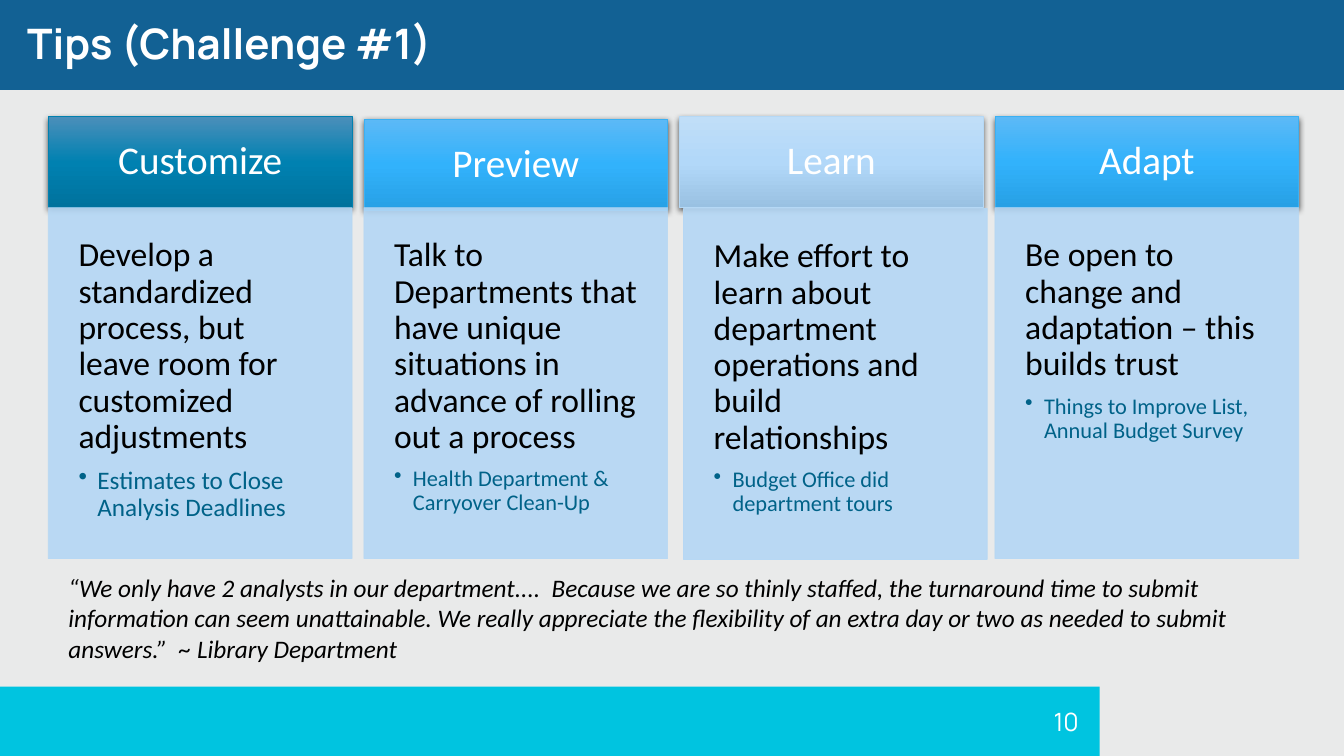
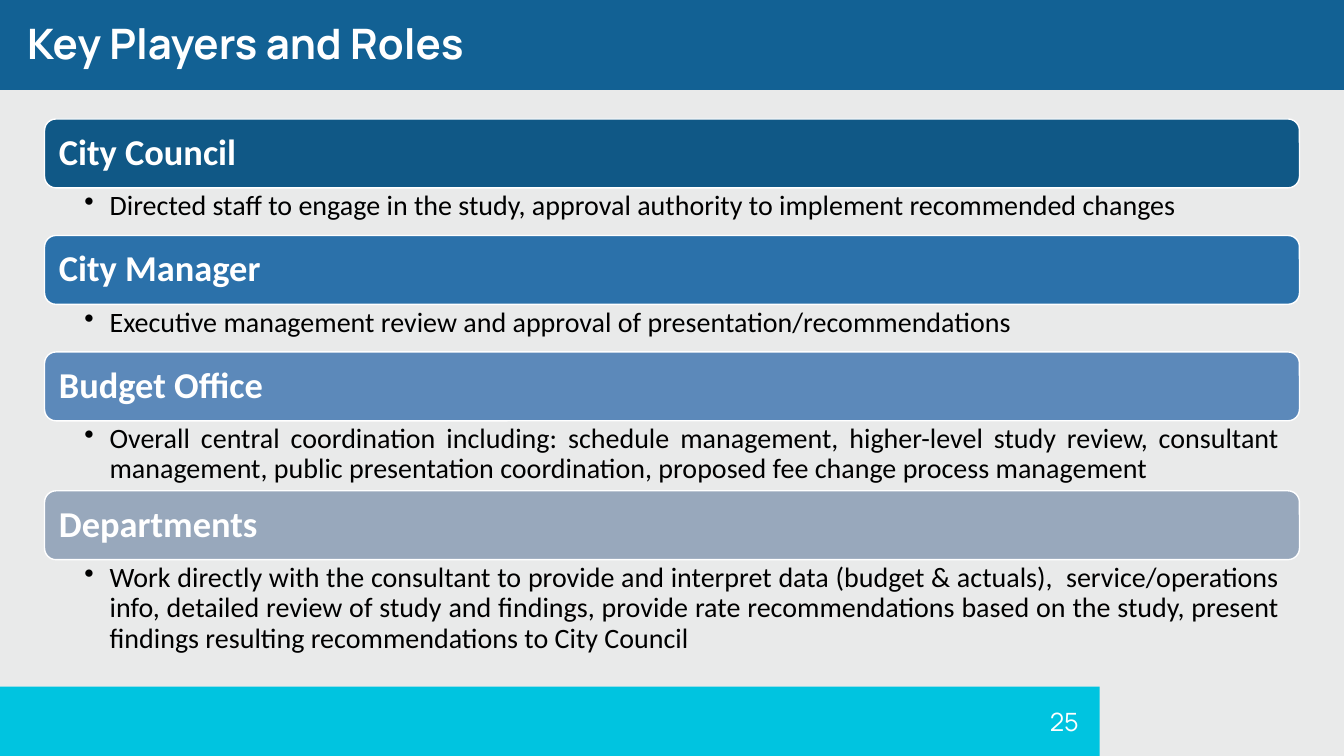
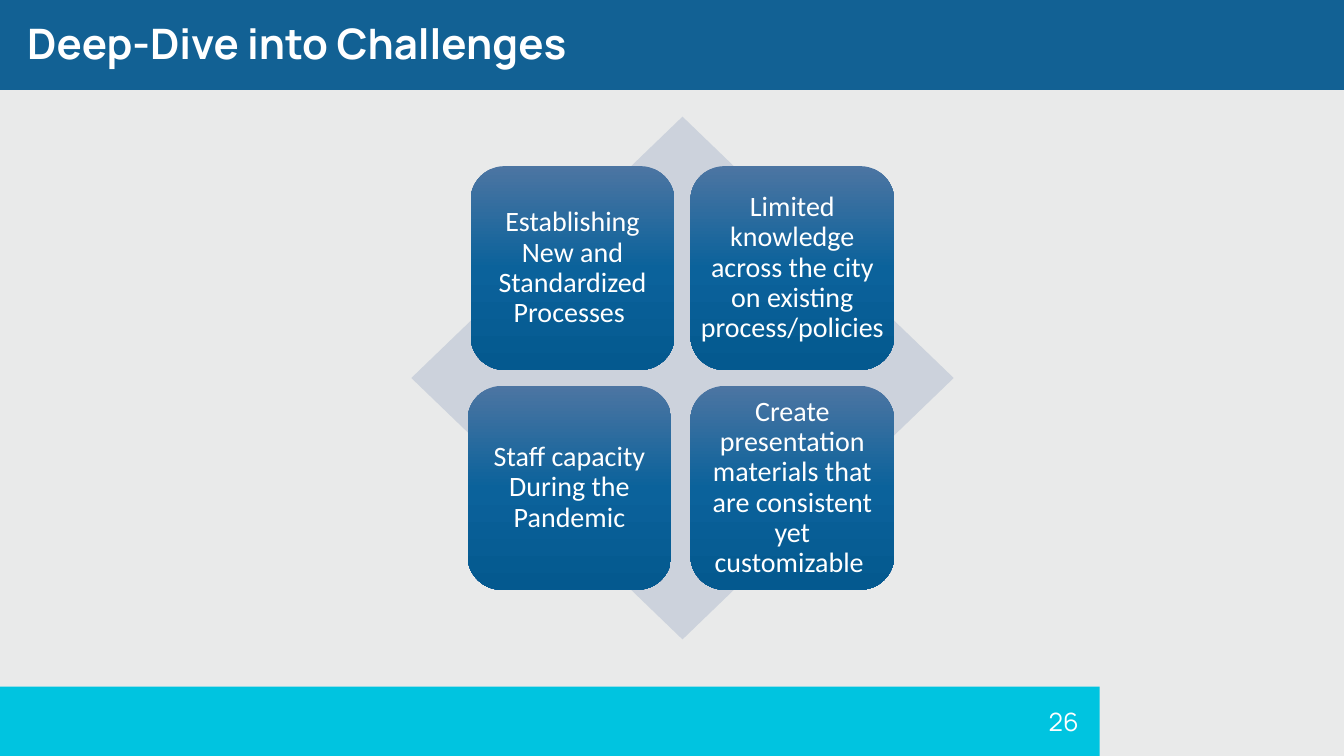
import dataclasses

import lxml.etree
import pptx
import pptx.dml.color
import pptx.enum.shapes
import pptx.enum.text
import pptx.oxml.ns
import pptx.util

Pt = pptx.util.Pt
qn = pptx.oxml.ns.qn
SHAPES = pptx.enum.shapes.MSO_SHAPE
ALIGN = pptx.enum.text.PP_ALIGN
ANCHOR = pptx.enum.text.MSO_ANCHOR


@dataclasses.dataclass(frozen=True)
class Theme:
    heading_font: str = "Manrope"
    body_font: str = "Calibri"
    page: str = "E9EAEA"
    title_band: str = "126194"
    footer_band: str = "00C4E0"
    white: str = "FFFFFF"
    ink: str = "000000"
    card: str = "B4D7F5"
    note: str = "006288"
    diamond: str = "CCD2DC"
    deep: tuple = ("4B8FBA", "0081B1", "00729D")
    bright: tuple = ("5CB9F6", "32B2FB", "27A0E5")
    pale: tuple = ("C0DEF8", "B2D8F9", "99C1E2")
    tile: tuple = ("4C75A2", "0B629B", "04598F")
    title_size: int = 30
    header_size: int = 28
    bar_size: int = 26
    card_size: int = 24
    text_size: int = 20
    small_size: int = 18
    note_size: int = 16


THEME = Theme()
SLIDE_WIDTH, SLIDE_HEIGHT = 960, 540

TIPS = [
    dict(header="Customize", colors=THEME.deep, line="0180AF",
         text="Develop a standardized process, but leave room for customized adjustments",
         note="Estimates to Close Analysis Deadlines", note_size=THEME.small_size),
    dict(header="Preview", colors=THEME.bright, line="3BB0F2", header_drop=1.8,
         text="Talk to Departments that have unique situations in advance of rolling out a process",
         note="Health Department & Carryover Clean-Up"),
    dict(header="Learn", colors=THEME.pale, line="B5D8F5", card_shift=(2.9, 0.7),
         text="Make effort to learn about department operations and build relationships",
         note="Budget Office did department tours"),
    dict(header="Adapt", colors=THEME.bright, line="3BB0F2",
         text="Be open to change and adaptation – this builds trust",
         note="Things to Improve List, Annual Budget Survey"),
]
QUOTE = (
    "“We only have 2 analysts in our department....  Because we are so thinly staffed, "
    "the turnaround time to submit information can seem unattainable. We really appreciate "
    "the flexibility of an extra day or two as needed to submit answers.”  ~ Library Department"
)
ROLES = [
    ("City Council", "105886", 34, ALIGN.LEFT,
     "Directed staff to engage in the study, approval authority to implement recommended changes"),
    ("City Manager", "2B71AA", 34, ALIGN.LEFT,
     "Executive management review and approval of presentation/recommendations"),
    ("Budget Office", "5C89BA", 50, ALIGN.JUSTIFY,
     "Overall central coordination including: schedule management, higher-level study review, "
     "consultant management, public presentation coordination, proposed fee change process "
     "management"),
    ("Departments", "98A8BC", 72, ALIGN.JUSTIFY,
     "Work directly with the consultant to provide and interpret data (budget & actuals),  "
     "service/operations info, detailed review of study and findings, provide rate "
     "recommendations based on the study, present findings resulting recommendations to "
     "City Council"),
]
CHALLENGES = [
    ("Establishing New and Standardized Processes ", 5.8, 0),
    ("Limited knowledge across the city on existing process/policies", 0, 0),
    ("Staff capacity During the Pandemic", 5.8, -2.2),
    ("Create presentation materials that are consistent yet customizable ", 5.8, 0),
]


def rgb(color):
    return pptx.dml.color.RGBColor.from_string(color)


def add_color(parent, color, opacity=100):
    element = lxml.etree.SubElement(parent, qn("a:srgbClr"), val=color)
    if opacity < 100:
        lxml.etree.SubElement(element, qn("a:alpha"), val=str(opacity * 1000))


def add_block(slide, preset, box, fill, line=None, line_width=0.5, opacity=100):
    shape = slide.shapes.add_shape(preset, *map(Pt, box))
    shape.shadow.inherit = False
    if isinstance(fill, tuple):
        shape.fill.gradient()
        shape.fill.gradient_angle = 270
        stops = shape._element.spPr.find(".//" + qn("a:gsLst"))
        stops.clear()
        for index, color in enumerate(fill):
            stop = lxml.etree.SubElement(stops, qn("a:gs"), pos=str(index * 50000))
            add_color(stop, color)
    else:
        shape.fill.solid()
        shape.fill.fore_color.rgb = rgb(fill)
    if line:
        shape.line.color.rgb = rgb(line)
        shape.line.width = Pt(line_width)
    else:
        shape.line.fill.background()
    if opacity < 100:
        for color in shape._element.spPr.iter(qn("a:srgbClr")):
            lxml.etree.SubElement(color, qn("a:alpha"), val=str(opacity * 1000))
    return shape


def add_shadow(shape):
    effects = shape._element.spPr.find(qn("a:effectLst"))
    shadow = lxml.etree.SubElement(
        effects, qn("a:outerShdw"), blurRad=str(Pt(4.5)), dist=str(Pt(1.5)),
        dir="5400000", rotWithShape="0")
    add_color(shadow, THEME.ink, 63)


def add_text_box(slide, box):
    return slide.shapes.add_textbox(*map(Pt, box))


def set_frame(shape, insets=(7.2, 3.6, 7.2, 3.6), anchor=ANCHOR.TOP):
    frame = shape.text_frame
    frame.word_wrap = True
    frame.vertical_anchor = anchor
    frame.margin_left, frame.margin_top, frame.margin_right, frame.margin_bottom = map(Pt, insets)
    return frame


def write(paragraph, text, size, color, font=THEME.body_font, align=ALIGN.LEFT,
          spacing=0.9, after=0, bullet_indent=0, bold=False, italic=False):
    paragraph.alignment = align
    paragraph.line_spacing = spacing
    paragraph.space_after = Pt(after)
    if bullet_indent:
        properties = paragraph._p.get_or_add_pPr()
        properties.set("marL", str(Pt(bullet_indent)))
        properties.set("indent", str(-Pt(bullet_indent)))
        lxml.etree.SubElement(properties, qn("a:buChar"), char="•")
    run = paragraph.add_run()
    run.text = text
    run.font.name = font
    run.font.size = Pt(size)
    run.font.color.rgb = rgb(color)
    run.font.bold = bold
    run.font.italic = italic


def add_slide(presentation, title, number):
    slide = presentation.slides.add_slide(presentation.slide_layouts[6])
    slide.background.fill.solid()
    slide.background.fill.fore_color.rgb = rgb(THEME.page)
    add_block(slide, SHAPES.RECTANGLE, (0, 490.4, 785.6, 49.6), THEME.footer_band)
    add_block(slide, SHAPES.RECTANGLE, (0, 0, SLIDE_WIDTH, 64.2), THEME.title_band)
    title_frame = set_frame(add_text_box(slide, (12.4, 15, 936, 35.5)), anchor=ANCHOR.MIDDLE)
    write(title_frame.paragraphs[0], title, THEME.title_size, THEME.white,
          THEME.heading_font, bold=True)
    number_frame = set_frame(add_text_box(slide, (13, 501, 764.6, 29)), anchor=ANCHOR.MIDDLE)
    write(number_frame.paragraphs[0], str(number), THEME.small_size, THEME.white,
          THEME.heading_font, ALIGN.RIGHT, spacing=1.0)
    return slide


def build_tips(presentation):
    slide = add_slide(presentation, "Tips (Challenge #1)", 10)
    left, pitch, width = 34.5, 225.4, 217
    header_top, header_height, card_top, card_height = 83.3, 65, 148.3, 250.6
    for index, tip in enumerate(TIPS):
        x = left + index * pitch
        header_box = (x, header_top + tip.get("header_drop", 0), width, header_height)
        header = add_block(slide, SHAPES.RECTANGLE, header_box, tip["colors"], tip["line"])
        add_shadow(header)
        frame = set_frame(header, (17, 17, 17, 17), ANCHOR.MIDDLE)
        write(frame.paragraphs[0], tip["header"], THEME.header_size, THEME.white,
              align=ALIGN.CENTER)
        shift_x, shift_y = tip.get("card_shift", (0, 0))
        card = add_block(slide, SHAPES.RECTANGLE,
                         (x + shift_x, card_top + shift_y, width, card_height),
                         THEME.card, THEME.card, opacity=90)
        frame = set_frame(card, (21.6, 21.6, 21.6, 21.6))
        write(frame.paragraphs[0], tip["text"], THEME.card_size, THEME.ink, after=8.4)
        write(frame.add_paragraph(), tip["note"], tip.get("note_size", THEME.note_size),
              THEME.note, bullet_indent=13.5)
    quote_frame = set_frame(add_text_box(slide, (41.8, 405.4, 878.4, 72.7)))
    write(quote_frame.paragraphs[0], QUOTE, THEME.small_size, THEME.ink,
          spacing=1.0, italic=True)


def build_roles(presentation):
    slide = add_slide(presentation, "Key Players and Roles", 25)
    left, top, width, bar_height = 31.8, 85, 896.4, 49.2
    for name, color, duty_height, align, duty in ROLES:
        bar = add_block(slide, SHAPES.ROUNDED_RECTANGLE, (left, top, width, bar_height),
                        color, THEME.white, 1)
        frame = set_frame(bar, (7.9, 7.9, 7.9, 7.9), ANCHOR.MIDDLE)
        write(frame.paragraphs[0], name, THEME.bar_size, THEME.white, bold=True)
        top += bar_height
        frame = set_frame(add_text_box(slide, (left, top, width, duty_height)),
                          (28.5, 2.6, 14.4, 2.6))
        write(frame.paragraphs[0], duty, THEME.text_size, THEME.ink, align=align,
              bullet_indent=18)
        top += duty_height


def build_challenges(presentation):
    slide = add_slide(presentation, "Deep-Dive into Challenges", 26)
    center_x, center_y = 487.5, 270
    diamond_width, diamond_height = 387.4, 373.4
    tile_size, gap = 145.6, 11.4
    add_block(slide, SHAPES.DIAMOND,
              (center_x - diamond_width / 2, center_y - diamond_height / 2,
               diamond_width, diamond_height), THEME.diamond)
    for index, (text, inset, shift_x) in enumerate(CHALLENGES):
        row, column = divmod(index, 2)
        x = center_x - tile_size - gap / 2 + column * (tile_size + gap) + shift_x
        y = center_y - tile_size - gap / 2 + row * (tile_size + gap)
        tile = add_block(slide, SHAPES.ROUNDED_RECTANGLE, (x, y, tile_size, tile_size),
                         THEME.tile)
        frame = set_frame(tile, (inset,) * 4, ANCHOR.MIDDLE)
        write(frame.paragraphs[0], text, THEME.text_size, THEME.white, align=ALIGN.CENTER)


def main():
    presentation = pptx.Presentation()
    presentation.slide_width = Pt(SLIDE_WIDTH)
    presentation.slide_height = Pt(SLIDE_HEIGHT)
    build_tips(presentation)
    build_roles(presentation)
    build_challenges(presentation)
    presentation.save("out.pptx")


if __name__ == "__main__":
    main()
